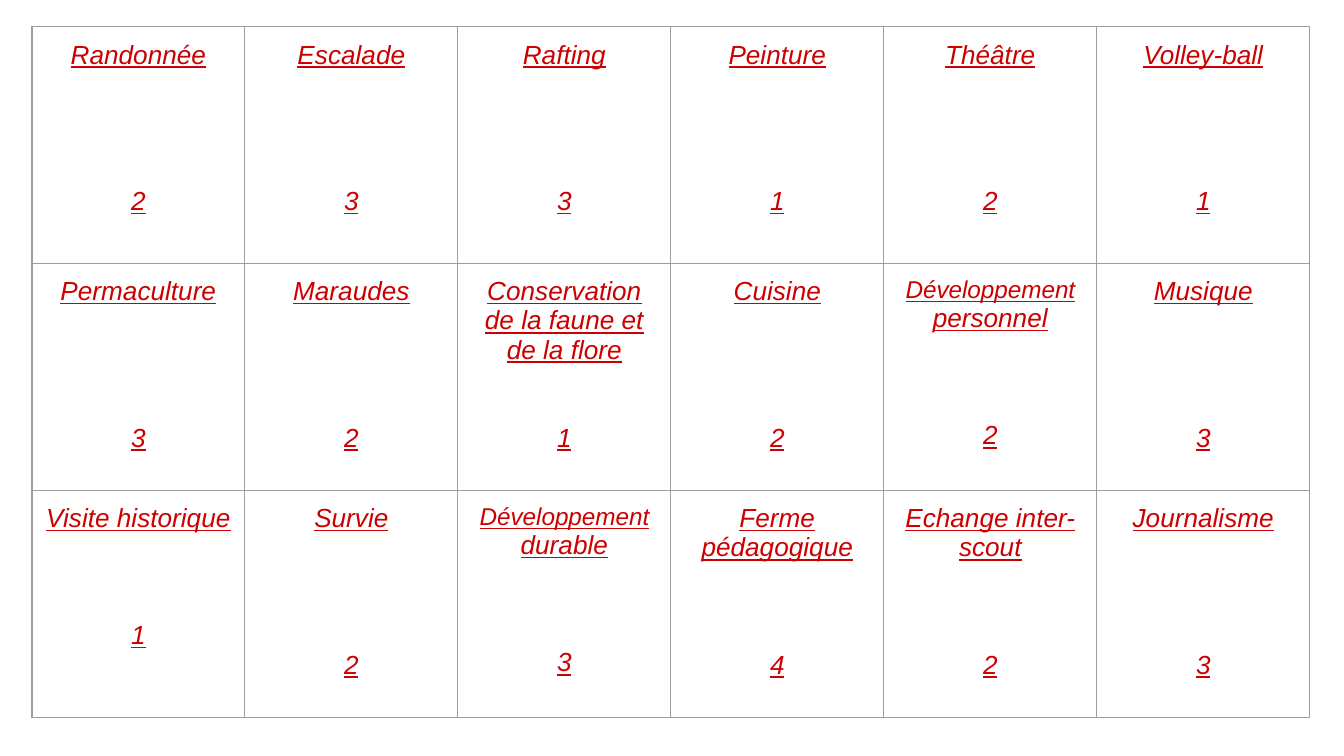
from lxml.etree import SubElement
from pptx import Presentation
from pptx.dml.color import RGBColor
from pptx.enum.text import PP_ALIGN
from pptx.oxml.ns import qn
from pptx.util import Pt

# Content: paragraphs of the title, blank lines below it, number
ACTIVITIES = [
    [(["Randonnée"], 4, 2), (["Escalade"], 4, 3), (["Rafting"], 4, 3),
     (["Peinture"], 4, 1), (["Théâtre"], 4, 2), (["Volley-ball"], 4, 1)],
    [(["Permaculture"], 4, 3), (["Maraudes"], 4, 2),
     (["Conservation de la faune et de la flore"], 2, 1),
     (["Cuisine"], 4, 2), (["Développement personnel"], 3, 2),
     (["Musique"], 4, 3)],
    [(["Visite historique"], 3, 1), (["Survie"], 4, 2),
     (["Développement", "durable"], 3, 3), (["Ferme pédagogique"], 3, 4),
     (["Echange inter-scout"], 3, 2), (["Journalisme"], 4, 3)],
]
LONG_WORD = "Développement"

# Layout and style, in points
LEFT, TOP = 17.1, 14.4
COLUMN_WIDTH = 114.1
ROW_HEIGHTS = [126.7, 121.6, 121.6]
INSET = 7.2
LINE_HEIGHT = 15.7
TEXT_SIZE, LONG_WORD_SIZE = 14, 13
RED, GREY = "CC0000", "9E9E9E"


def color(hex_value):
    return RGBColor.from_string(hex_value)


def add_run(paragraph, text, size):
    run = paragraph.add_run()
    run.text = text
    font = run.font
    font.name, font.size = "Arial", Pt(size)
    font.italic = font.underline = True
    font.color.rgb = color(RED)


def write_line(paragraph, text):
    """Write one centred paragraph, with the long word slightly smaller."""
    paragraph.alignment = PP_ALIGN.CENTER
    if text.startswith(LONG_WORD):
        first, space, rest = text.partition(" ")
        add_run(paragraph, first + space, LONG_WORD_SIZE)
        text = rest
    if text:
        add_run(paragraph, text, TEXT_SIZE)


def set_borders(cell):
    properties = cell._tc.get_or_add_tcPr()
    for position, side in enumerate(("a:lnL", "a:lnR", "a:lnT", "a:lnB")):
        line = SubElement(properties, qn(side), w=str(Pt(0.75)))
        fill = SubElement(line, qn("a:solidFill"))
        SubElement(fill, qn("a:srgbClr"), val=GREY)
        properties.insert(position, line)


def fill_cell(cell, titles, blank_lines, number):
    cell.margin_left = cell.margin_right = Pt(INSET)
    cell.margin_top = cell.margin_bottom = Pt(INSET)
    cell.fill.background()
    set_borders(cell)
    frame = cell.text_frame
    for index, text in enumerate(titles):
        paragraph = frame.add_paragraph() if index else frame.paragraphs[0]
        write_line(paragraph, text)
    paragraph = frame.add_paragraph()
    paragraph.space_before = Pt(blank_lines * LINE_HEIGHT)
    write_line(paragraph, str(number))


def main():
    presentation = Presentation()
    presentation.slide_width, presentation.slide_height = Pt(720), Pt(405)
    slide = presentation.slides.add_slide(presentation.slide_layouts[6])

    # Table of activities
    row_count, column_count = len(ACTIVITIES), len(ACTIVITIES[0])
    table = slide.shapes.add_table(
        row_count, column_count, Pt(LEFT), Pt(TOP),
        Pt(COLUMN_WIDTH * column_count), Pt(sum(ROW_HEIGHTS))).table
    table.first_row = table.horz_banding = False
    for column in table.columns:
        column.width = Pt(COLUMN_WIDTH)
    for row, height, activities in zip(table.rows, ROW_HEIGHTS, ACTIVITIES):
        row.height = Pt(height)
        for cell, activity in zip(row.cells, activities):
            fill_cell(cell, *activity)

    presentation.save("out.pptx")


if __name__ == "__main__":
    main()
